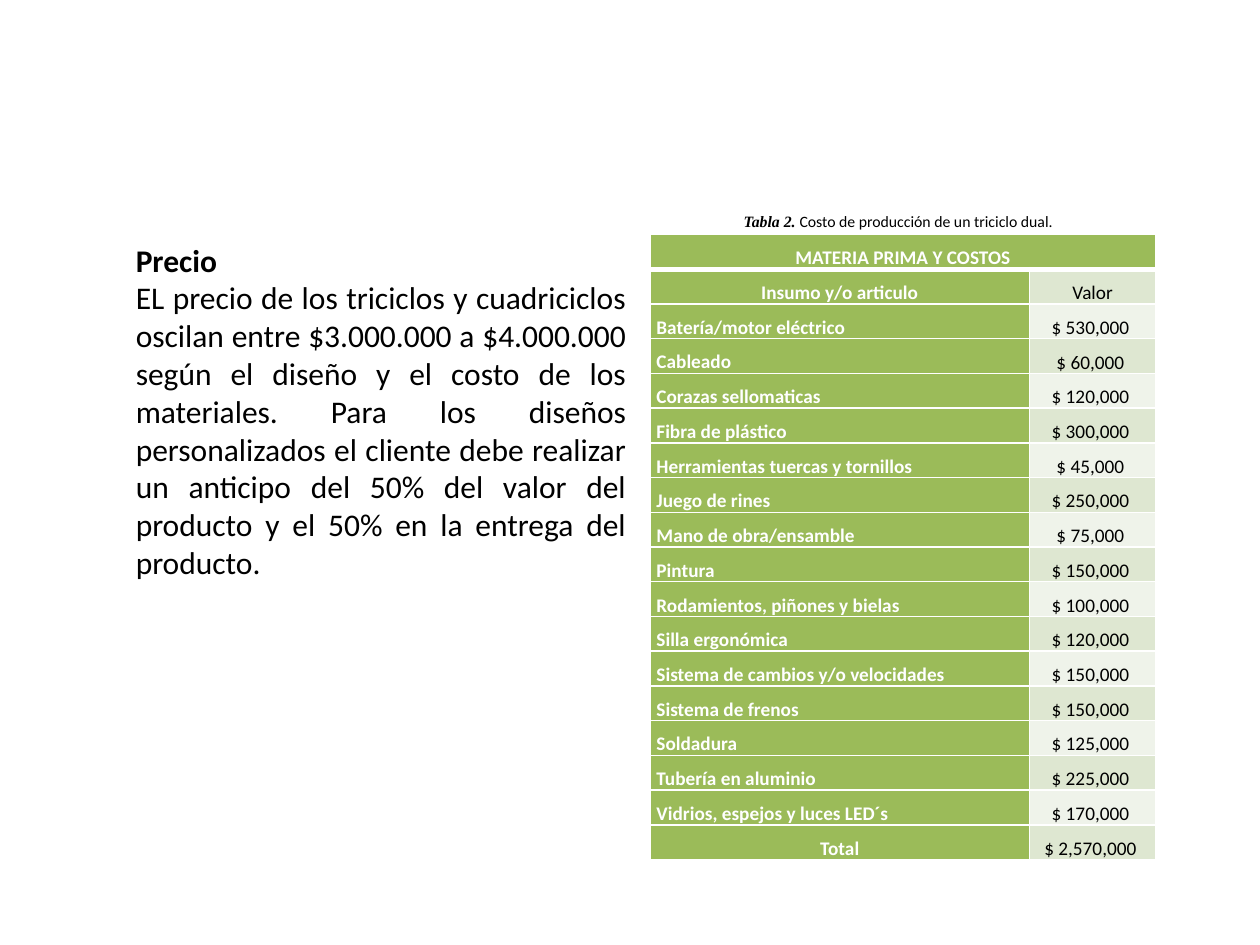
from lxml.etree import SubElement
from pptx import Presentation
from pptx.dml.color import RGBColor
from pptx.enum.text import MSO_ANCHOR, MSO_AUTO_SIZE, PP_ALIGN
from pptx.oxml.ns import qn
from pptx.util import Pt

BLACK = RGBColor(0x00, 0x00, 0x00)
WHITE = RGBColor(0xFF, 0xFF, 0xFF)
GREEN = RGBColor(0x9B, 0xBB, 0x59)
BANDS = (RGBColor(0xEF, 0xF3, 0xEA), RGBColor(0xDE, 0xE7, 0xD1))
COSTS = {
    "Batería/motor eléctrico": 530000,
    "Cableado": 60000,
    "Corazas sellomaticas": 120000,
    "Fibra de plástico": 300000,
    "Herramientas tuercas y tornillos": 45000,
    "Juego de rines": 250000,
    "Mano de obra/ensamble": 75000,
    "Pintura": 150000,
    "Rodamientos, piñones y bielas": 100000,
    "Silla ergonómica": 120000,
    "Sistema de cambios y/o velocidades": 150000,
    "Sistema de frenos": 150000,
    "Soldadura": 125000,
    "Tubería en aluminio": 225000,
    "Vidrios, espejos y luces LED´s": 170000,
}
PRICE = (
    "EL precio de los triciclos y cuadriciclos oscilan entre $3.000.000 a "
    "$4.000.000 según el diseño y el costo de los materiales. Para los diseños "
    "personalizados el cliente debe realizar un anticipo del 50% del valor del "
    "producto y el 50% en la entrega del producto. "
)


def dress(item, form):
    """Set each attribute named in a dict of format values."""
    for name, value in form.items():
        setattr(item, name, value)


def write(para, text, size, color=BLACK, **form):
    """Add a formatted run to a paragraph."""
    run = para.add_run()
    run.text = text
    dress(run.font, {"name": "Calibri", "size": Pt(size), "bold": False} | form)
    run.font.color.rgb = color


def add_box(slide, box):
    """Add a wrapping text box and return its frame."""
    frame = slide.shapes.add_textbox(*map(Pt, box)).text_frame
    dress(frame, {"word_wrap": True, "auto_size": MSO_AUTO_SIZE.SHAPE_TO_FIT_TEXT})
    return frame


def add_price(slide, box):
    """Place the price heading and its justified paragraph."""
    frame = add_box(slide, box)
    head, body = frame.paragraphs[0], frame.add_paragraph()
    write(head, "Precio", 18, bold=True)
    write(body, PRICE, 18)
    for para in (head, body):
        para.alignment = PP_ALIGN.JUSTIFY


def add_label(slide, box):
    """Place the centred table caption."""
    para = add_box(slide, box).paragraphs[0]
    dress(para, {"alignment": PP_ALIGN.CENTER, "line_spacing": 2.0})
    para._p.get_or_add_pPr().set("indent", str(Pt(14.4)))
    write(para, "Tabla 2. ", 9, name="Times New Roman", bold=True, italic=True)
    write(para, "Costo de producción de un triciclo dual.", 9)


def add_rule(cell, side, width):
    """Draw one white border of a cell."""
    line = SubElement(cell._tc.get_or_add_tcPr(), qn(f"a:ln{side}"), w=str(Pt(width)))
    SubElement(SubElement(line, qn("a:solidFill")), qn("a:srgbClr"), val=str(WHITE))


def fill_cell(cell, row, col, text, last):
    """Format one cell by its place in the table and write its text."""
    for side in "LRTB":
        thick = (row, side) in ((0, "B"), (1, "T"))
        add_rule(cell, side, 3 if thick else 1)
    label = row == 0 or col == 0
    cell.fill.solid()
    cell.fill.fore_color.rgb = GREEN if label else BANDS[row % 2]
    item = col == 0 and 1 < row < last
    low = row == 0 or item or (row == last and col == 1)
    dress(cell, {
        "margin_left": Pt(3.6), "margin_right": Pt(3.6),
        "margin_top": 0, "margin_bottom": 0,
        "vertical_anchor": MSO_ANCHOR.BOTTOM if low else MSO_ANCHOR.MIDDLE,
    })
    para = cell.text_frame.paragraphs[0]
    dress(para, {
        "alignment": PP_ALIGN.LEFT if item else PP_ALIGN.CENTER,
        "line_spacing": 1.5,
    })
    if text:
        write(para, text, 11, WHITE if label else BLACK, bold=label)


def add_costs(slide, box):
    """Place the cost table with its header and total rows."""
    sums = COSTS | {"Total": sum(COSTS.values())}
    rows = [("MATERIA PRIMA Y COSTOS", ""), ("Insumo y/o articulo", "Valor")]
    rows += [(name, f"$ {cost:,} ") for name, cost in sums.items()]
    table = slide.shapes.add_table(len(rows), 2, *map(Pt, box)).table
    dress(table, {"first_row": False, "horz_banding": False})
    for col, share in enumerate((0.75, 0.25)):
        table.columns[col].width = Pt(box[2] * share)
    for row, texts in enumerate(rows):
        table.rows[row].height = Pt(box[3] / len(rows))
        for col, text in enumerate(texts):
            fill_cell(table.cell(row, col), row, col, text, len(rows) - 1)
    table.cell(0, 0).merge(table.cell(0, 1))


def main():
    """Build and save the slide."""
    deck = Presentation()
    dress(deck, {"slide_width": Pt(720), "slide_height": Pt(540)})
    slide = deck.slides.add_slide(deck.slide_layouts[6])
    add_price(slide, (70.5, 134, 294.5, 225.4))
    add_costs(slide, (371.5, 134, 289, 356.4))
    add_label(slide, (326, 106.5, 360, 28.8))
    deck.save("out.pptx")


if __name__ == "__main__":
    main()
